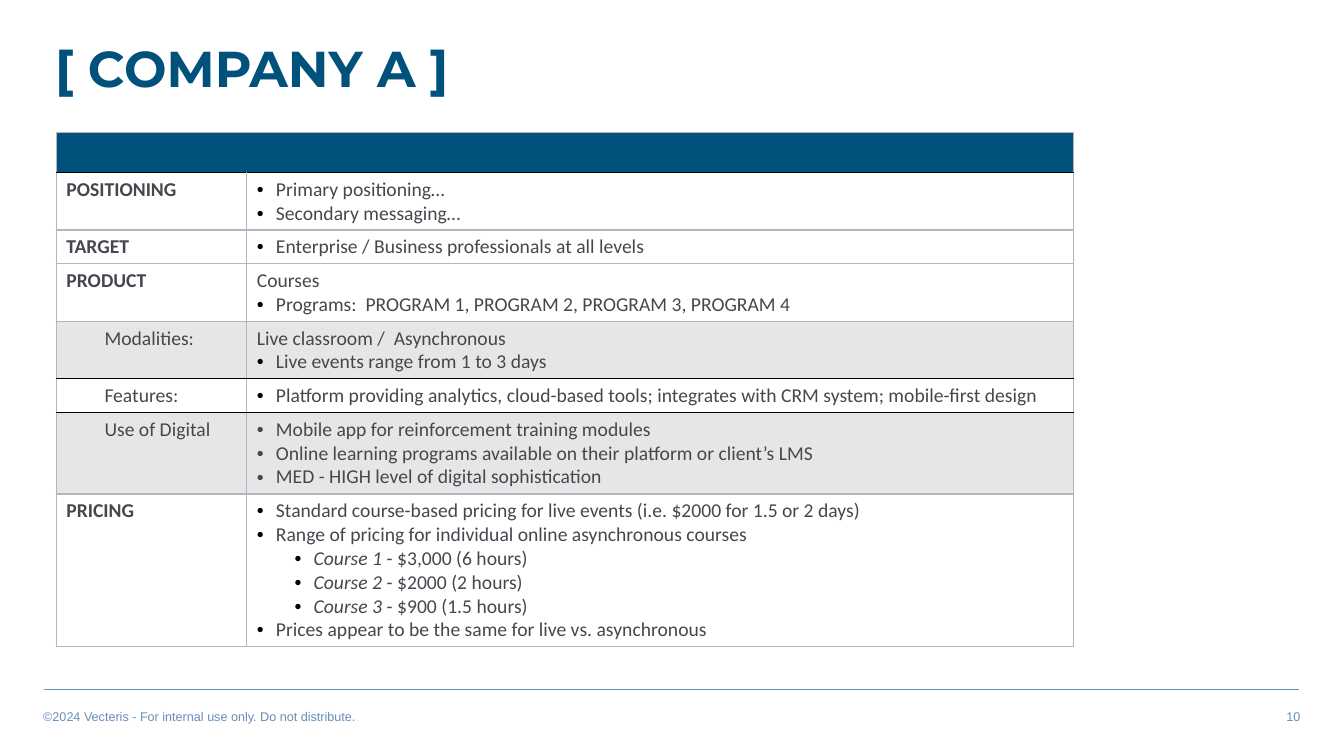
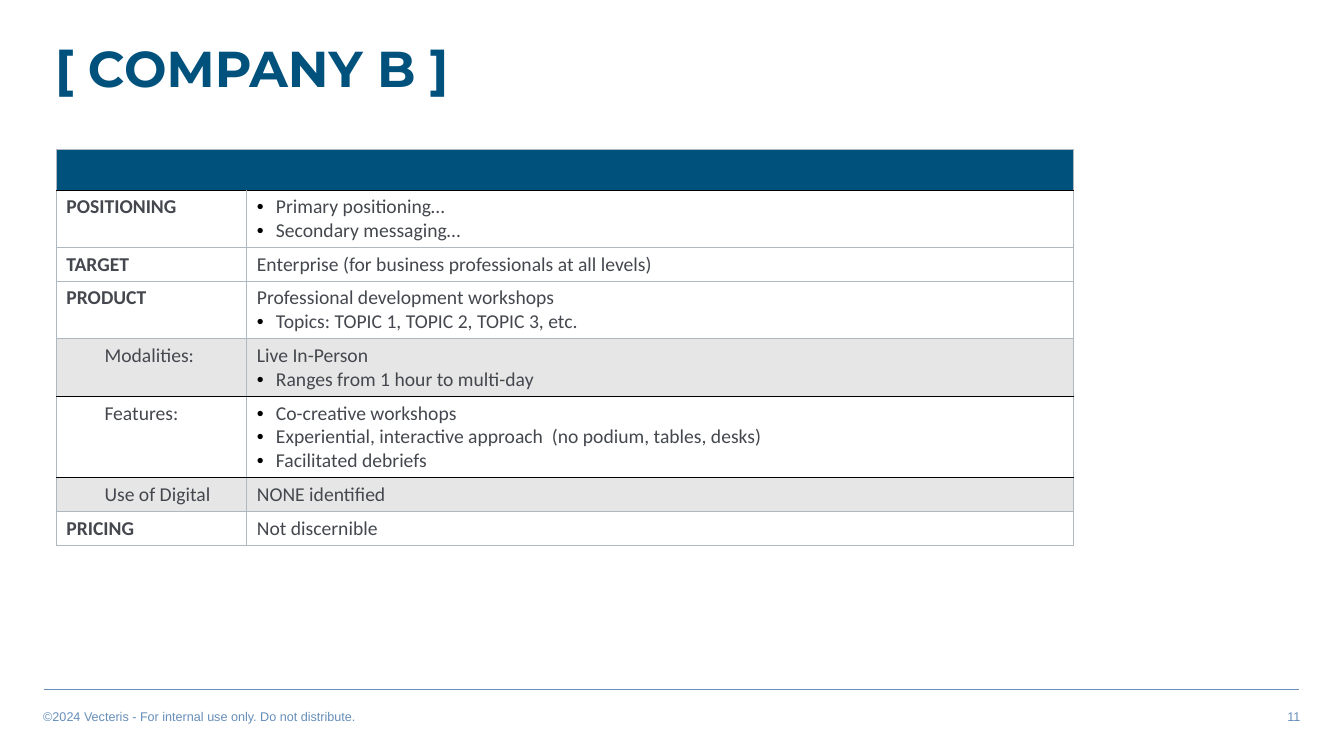
"""Build two competitor profile slides with a shared title, table and footer style."""
import lxml.etree
import pptx
import pptx.dml.color
import pptx.enum.shapes
import pptx.enum.text
import pptx.oxml.ns
import pptx.util

Cm = pptx.util.Cm
Pt = pptx.util.Pt
qn = pptx.oxml.ns.qn
ALIGN = pptx.enum.text.PP_ALIGN

COLORS = {
    "navy": "00517C",
    "steel": "668EB9",
    "body": "44484E",
    "grid": "AFB7C0",
    "rule": "000000",
    "shade": "E7E6E6",
    "white": "FFFFFF",
}
BORDER_WIDTHS = {"grid": 1, "rule": 0.75}
COPYRIGHT = "©2024 Vecteris - For internal use only. Do not distribute."

TABLE_LEFT = 1.42
COLUMN_WIDTHS = (4.8, 20.83)
HEADER_HEIGHT = 0.96
LINE_HEIGHT = 0.6
CELL_PADDING = 0.25

PLAIN, BULLET, SUB_BULLET, SUB_LABEL = range(4)
INDENTS = {BULLET: (0.48, -0.48), SUB_BULLET: (1.43, -0.48), SUB_LABEL: (0.96, 0)}

TOPICS = [
    ("POSITIONING", PLAIN, "white", "grid"),
    ("TARGET", PLAIN, "white", "grid"),
    ("PRODUCT", PLAIN, "white", "grid"),
    ("Modalities:", SUB_LABEL, "shade", "rule"),
    ("Features:", SUB_LABEL, "white", "rule"),
    ("Use of Digital", SUB_LABEL, "shade", "grid"),
    ("PRICING", PLAIN, "white", "grid"),
]


def plain(text):
    return [(PLAIN, text, "")]


def bullets(*texts):
    return [(BULLET, text, "") for text in texts]


def courses(*offers):
    return [(SUB_BULLET, name, price) for name, price in offers]


POSITIONING = bullets("Primary positioning…", "Secondary messaging…")

COMPANY_A = [
    POSITIONING,
    bullets("Enterprise / Business professionals at all levels"),
    plain("Courses") + bullets("Programs:  PROGRAM 1, PROGRAM 2, PROGRAM 3, PROGRAM 4"),
    plain("Live classroom /  Asynchronous") + bullets("Live events range from 1 to 3 days"),
    bullets("Platform providing analytics, cloud-based tools; "
            "integrates with CRM system; mobile-first design"),
    bullets("Mobile app for reinforcement training modules",
            "Online learning programs available on their platform or client’s LMS",
            "MED - HIGH level of digital sophistication"),
    bullets("Standard course-based pricing for live events (i.e. $2000 for 1.5 or 2 days)",
            "Range of pricing for individual online asynchronous courses")
    + courses(("Course 1 ", "- $3,000 (6 hours)"),
              ("Course 2 ", "- $2000 (2 hours)"),
              ("Course 3 ", "- $900 (1.5 hours)"))
    + bullets("Prices appear to be the same for live vs. asynchronous"),
]

COMPANY_B = [
    POSITIONING,
    plain("Enterprise (for business professionals at all levels)"),
    plain("Professional development workshops") + bullets("Topics: TOPIC 1, TOPIC 2, TOPIC 3, etc."),
    plain("Live In-Person") + bullets("Ranges from 1 hour to multi-day"),
    bullets("Co-creative workshops",
            "Experiential, interactive approach  (no podium, tables, desks)",
            "Facilitated debriefs"),
    plain("NONE identified"),
    plain("Not discernible"),
]


def rgb(color):
    return pptx.dml.color.RGBColor.from_string(COLORS[color])


def style_run(run, font_name, size, color, bold=False, italic=False):
    run.font.name = font_name
    run.font.size = Pt(size)
    run.font.color.rgb = rgb(color)
    run.font.bold = bold
    run.font.italic = italic


def add_label(slide, text, box, font_name, size, color, bold=False, align=ALIGN.LEFT):
    label = slide.shapes.add_textbox(*map(Cm, box))
    frame = label.text_frame
    frame.word_wrap = True
    frame.vertical_anchor = pptx.enum.text.MSO_ANCHOR.MIDDLE
    frame.text = text
    paragraph = frame.paragraphs[0]
    paragraph.alignment = align
    style_run(paragraph.runs[0], font_name, size, color, bold)
    return paragraph


def add_title(slide, text):
    title = add_label(slide, text, (1.14, 0.84, 21.64, 1.93), "Montserrat", 36, "navy", bold=True)
    title.line_spacing = 0.9


def add_footer(slide, number):
    divider = slide.shapes.add_connector(
        pptx.enum.shapes.MSO_CONNECTOR.STRAIGHT, Cm(1.12), Cm(17.37), Cm(32.74), Cm(17.37))
    divider.line.color.rgb = rgb("steel")
    divider.line.width = Pt(1)
    lxml.etree.SubElement(divider._element.spPr, qn("a:effectLst"))
    add_label(slide, COPYRIGHT, (0.84, 17.73, 13.54, 0.64), "Arial", 9, "steel")
    add_label(slide, str(number), (19.48, 17.73, 13.54, 0.64), "Arial", 9, "steel", align=ALIGN.RIGHT)


def add_solid_fill(parent, color):
    fill = lxml.etree.SubElement(parent, qn("a:solidFill"))
    lxml.etree.SubElement(fill, qn("a:srgbClr"), val=COLORS[color])


def style_cell(cell, fill, top, bottom):
    properties = cell._tc.get_or_add_tcPr()
    for side, color in (("lnL", "grid"), ("lnR", "grid"), ("lnT", top), ("lnB", bottom)):
        border = lxml.etree.SubElement(
            properties, qn(f"a:{side}"), w=str(int(Pt(BORDER_WIDTHS[color]))))
        add_solid_fill(border, color)
    cell.fill.solid()
    cell.fill.fore_color.rgb = rgb(fill)


def indent_paragraph(paragraph, kind, bullet_color):
    properties = paragraph._p.get_or_add_pPr()
    margin, first_line = INDENTS[kind]
    properties.set("marL", str(int(Cm(margin))))
    properties.set("indent", str(int(Cm(first_line))))
    if kind != BULLET:
        paragraph.level = 1
    if kind != SUB_LABEL:
        bullet = lxml.etree.SubElement(properties, qn("a:buClr"))
        lxml.etree.SubElement(bullet, qn("a:srgbClr"), val=COLORS[bullet_color])
        lxml.etree.SubElement(properties, qn("a:buFont"), typeface="Arial")
        lxml.etree.SubElement(properties, qn("a:buChar"), char="•")


def fill_cell(cell, entries, bold=False, bullet_color="rule"):
    frame = cell.text_frame
    for position, (kind, text, price) in enumerate(entries):
        paragraph = frame.add_paragraph() if position else frame.paragraphs[0]
        paragraph.text = text
        if price:
            paragraph.add_run().text = price
        if kind in INDENTS:
            indent_paragraph(paragraph, kind, bullet_color)
        for run in paragraph.runs:
            style_run(run, "Calibri", 14, "body", bold)
        paragraph.runs[0].font.italic = kind == SUB_BULLET


def add_profile_table(slide, top, details):
    heights = [HEADER_HEIGHT] + [CELL_PADDING + LINE_HEIGHT * len(entries) for entries in details]
    profile = slide.shapes.add_table(
        len(heights), len(COLUMN_WIDTHS), Cm(TABLE_LEFT), Cm(top),
        Cm(sum(COLUMN_WIDTHS)), Cm(sum(heights))).table
    profile.first_row = False
    profile.horz_banding = False
    for column, width in zip(profile.columns, COLUMN_WIDTHS):
        column.width = Cm(width)
    for row, height in zip(profile.rows, heights):
        row.height = Cm(height)

    for cell in profile.rows[0].cells:
        style_cell(cell, "navy", "grid", "rule")
    profile.cell(0, 0).merge(profile.cell(0, 1))

    upper_border = "rule"
    for index, ((topic, kind, fill, lower_border), entries) in enumerate(zip(TOPICS, details), 1):
        topic_cell, detail_cell = profile.rows[index].cells
        for cell in (topic_cell, detail_cell):
            style_cell(cell, fill, upper_border, lower_border)
        fill_cell(topic_cell, [(kind, topic, "")], bold=kind == PLAIN)
        fill_cell(detail_cell, entries,
                  bullet_color="body" if topic == "Use of Digital" else "rule")
        upper_border = lower_border


def main():
    deck = pptx.Presentation()
    deck.slide_width, deck.slide_height = Cm(33.87), Cm(19.05)
    profiles = [
        ("[ COMPANY A ]", 3.33, COMPANY_A),
        ("[ COMPANY B ]", 3.77, COMPANY_B),
    ]
    for number, (title, table_top, details) in enumerate(profiles, 10):
        slide = deck.slides.add_slide(deck.slide_layouts[6])
        add_footer(slide, number)
        add_title(slide, title)
        add_profile_table(slide, table_top, details)
    deck.save("out.pptx")


if __name__ == "__main__":
    main()
